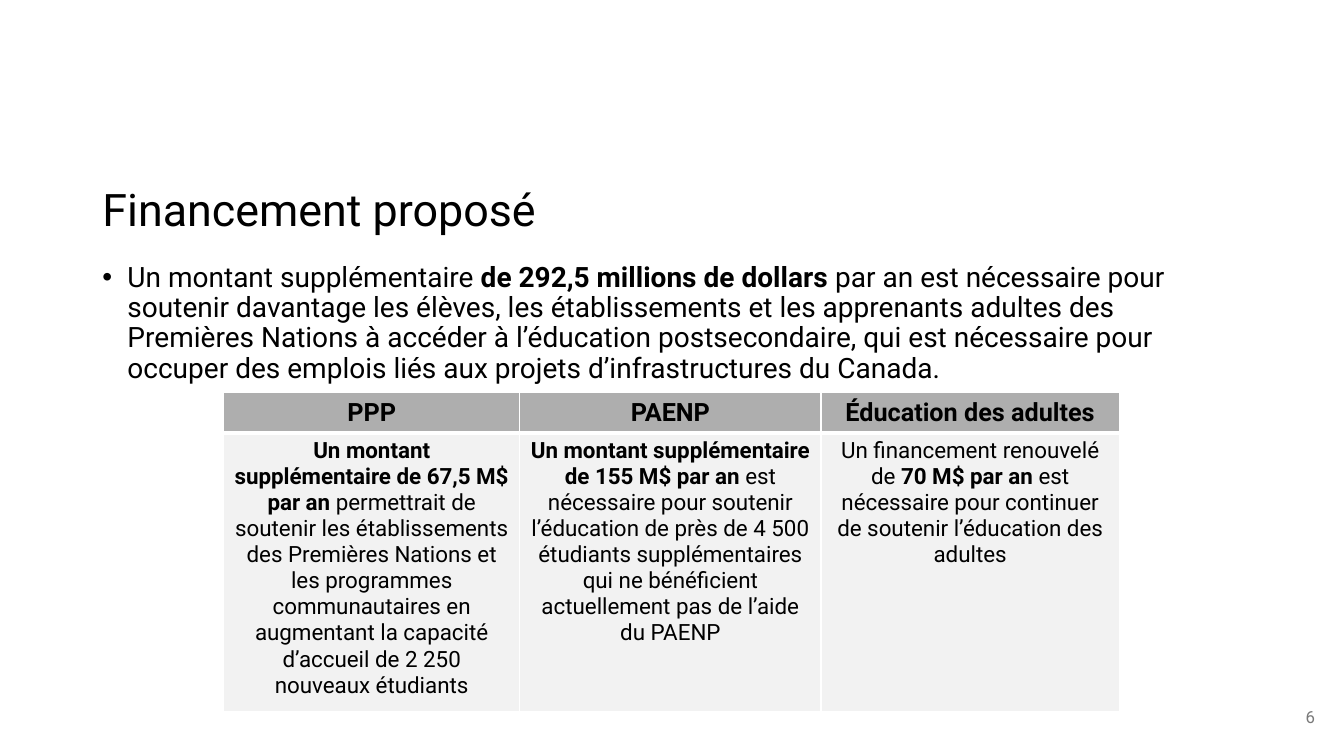
from lxml.etree import SubElement
from pptx import Presentation
from pptx.dml.color import RGBColor
from pptx.enum.text import MSO_ANCHOR as Anchor, MSO_AUTO_SIZE as AutoSize, PP_ALIGN as Align
from pptx.oxml import parse_xml
from pptx.oxml.ns import nsdecls, qn
from pptx.util import Pt

EMU_PER_PX = 9525
TITLE_ONLY = 5
BLACK, WHITE, GREY = "000000", "FFFFFF", "797979"
HEADER_FILL, BODY_FILL = "AEAEAE", "F2F2F2"


def px(length):
    return length * EMU_PER_PX


def color(hex_code):
    return RGBColor.from_string(hex_code)


def apply(target, values):
    for name, value in values.items():
        setattr(target, name, value)


class SlideBuilder:
    font_name = "Roboto"

    def __init__(self, deck):
        self.slide = deck.slides.add_slide(deck.slide_layouts[TITLE_ONLY])

    def fill_text(self, frame, runs, size, ink=BLACK, bullet_indent=0, **layout):
        """Fill the first paragraph of a frame with (text, bold) runs."""
        frame.word_wrap = True
        paragraph = frame.paragraphs[0]
        if bullet_indent:
            properties = paragraph._p.get_or_add_pPr()
            properties.set("marL", str(px(bullet_indent)))
            properties.set("indent", str(-px(bullet_indent)))
            SubElement(properties, qn("a:buFont"), typeface="Arial")
            SubElement(properties, qn("a:buChar"), char="•")
        apply(paragraph, layout)
        for text, bold in runs:
            run = paragraph.add_run()
            run.text = text
            apply(run.font, {"name": self.font_name, "size": Pt(size), "bold": bold})
            run.font.color.rgb = color(ink)

    def place(self, shape, left, top, width, height):
        apply(shape, {"left": px(left), "top": px(top),
                      "width": px(width), "height": px(height)})

    def title(self, text, box, size):
        heading = self.slide.shapes.title
        self.place(heading, *box)
        apply(heading.text_frame, {"auto_size": AutoSize.NONE,
                                   "vertical_anchor": Anchor.MIDDLE})
        self.fill_text(heading.text_frame, [(text, False)], size,
                       alignment=Align.LEFT, line_spacing=0.9)

    def text(self, runs, box, size, anchor=Anchor.TOP, **style):
        frame = self.slide.shapes.add_textbox(*map(px, box)).text_frame
        frame.vertical_anchor = anchor
        self.fill_text(frame, runs, size, **style)

    def borders(self, cell, widths):
        """Draw white edges; widths are points for each of L, R, T, B."""
        properties = cell._tc.get_or_add_tcPr()
        for position, (side, width) in enumerate(widths.items()):
            edge = parse_xml(
                f'<a:ln{side} {nsdecls("a")} w="{Pt(width)}"><a:solidFill>'
                f'<a:srgbClr val="{WHITE}"/></a:solidFill></a:ln{side}>')
            properties.insert(position, edge)

    def table(self, rows, left, top, column_widths, row_heights, row_styles):
        box = (left, top, sum(column_widths), sum(row_heights))
        table = self.slide.shapes.add_table(
            len(rows), len(column_widths), *map(px, box)).table
        table.horz_banding = False
        for column, width in zip(table.columns, column_widths):
            column.width = px(width)
        for row, height, contents, (size, fill, edges) in zip(
                table.rows, row_heights, rows, row_styles):
            row.height = px(height)
            for cell, runs in zip(row.cells, contents):
                cell.fill.solid()
                cell.fill.fore_color.rgb = color(fill)
                self.borders(cell, edges)
                self.fill_text(cell.text_frame, runs, size, alignment=Align.CENTER)


def main():
    deck = Presentation()
    apply(deck, {"slide_width": px(1280), "slide_height": px(720)})
    funding = SlideBuilder(deck)

    funding.title("Financement proposé", (88, 159, 1104, 86), 32)
    funding.text(
        [("Un montant supplémentaire ", False),
         ("de 292,5 millions de dollars ", True),
         ("par an est nécessaire pour soutenir davantage les élèves, les "
          "établissements et les apprenants adultes des Premières Nations à "
          "accéder à l’éducation postsecondaire, qui est nécessaire pour "
          "occuper des emplois liés aux projets d’infrastructures du Canada.",
          False)],
        (88, 246, 1104, 403), 20, bullet_indent=24,
        line_spacing=0.9, space_after=Pt(18))

    programs = ["PPP", "PAENP", "Éducation des adultes"]
    needs = [
        [("Un montant supplémentaire de 67,5 M$ par an ", True),
         ("permettrait de soutenir les établissements des Premières Nations "
          "et les programmes communautaires en augmentant la capacité "
          "d’accueil de 2 250 nouveaux étudiants", False)],
        [("Un montant supplémentaire de 155 M$ par an ", True),
         ("est nécessaire pour soutenir l’éducation de près de 4 500 "
          "étudiants supplémentaires qui ne bénéficient actuellement pas de "
          "l’aide du PAENP", False)],
        [("Un financement renouvelé de", False),
         (" 70 M$ par an ", True),
         ("est nécessaire pour continuer de soutenir l’éducation des adultes",
          False)],
    ]
    funding.table(
        [[[(program, True)] for program in programs], needs],
        213, 374, [282, 287, 284], [37, 257],
        [(18, HEADER_FILL, {"L": 1, "R": 1, "T": 1, "B": 3}),
         (16, BODY_FILL, {"L": 1, "R": 1, "T": 3, "B": 1})])

    funding.text([("6", False)], (974, 664, 288, 38), 12,
                 anchor=Anchor.MIDDLE, ink=GREY, alignment=Align.RIGHT)
    deck.save("out.pptx")


if __name__ == "__main__":
    main()
